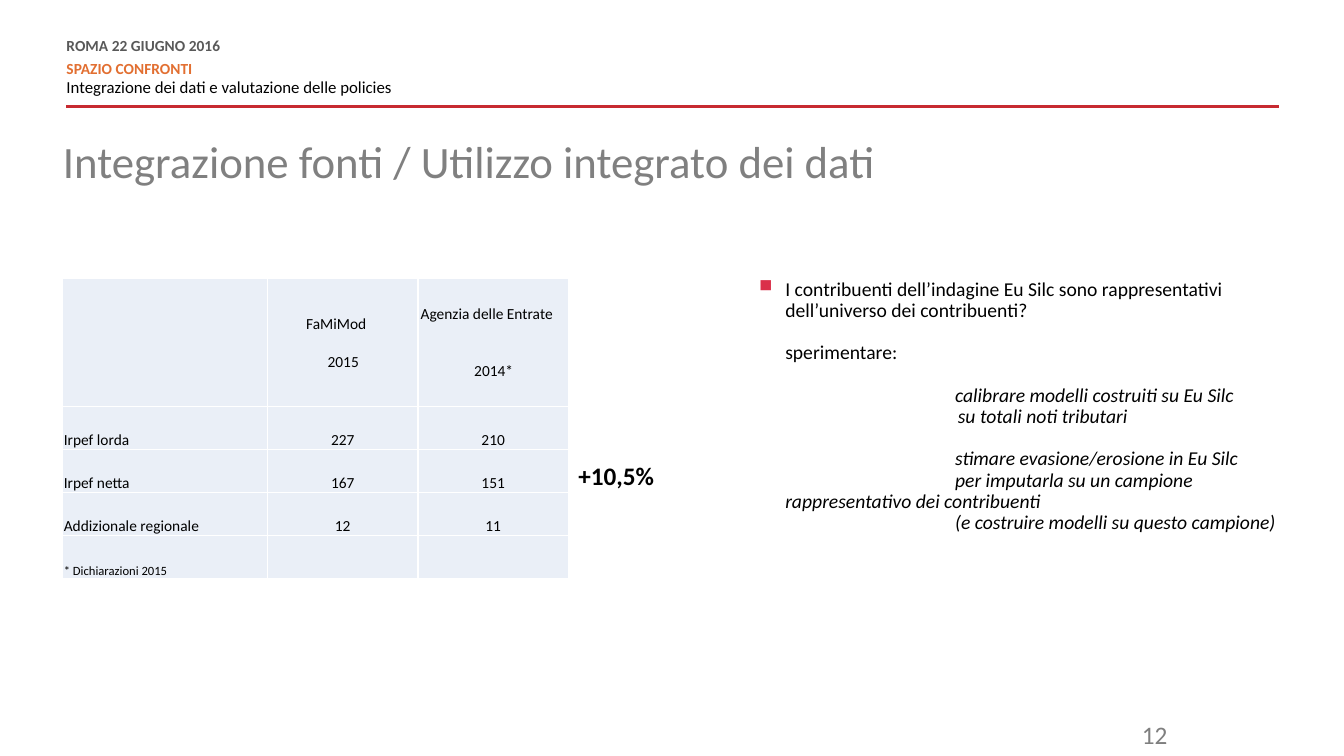
from dataclasses import dataclass

from lxml import etree
from pptx import Presentation
from pptx import util as u
from pptx.dml.color import RGBColor
from pptx.enum import shapes, text
from pptx.oxml.ns import qn

# Content
TITLE = "Integrazione fonti / Utilizzo integrato dei dati"
PAGE_NUMBER = "12"
DIFFERENCE = "+10,5%"
EVENT_DATE = "ROMA 22 GIUGNO 2016"
EVENT_NAME = "SPAZIO CONFRONTI"
EVENT_TOPIC = "Integrazione dei dati e valutazione delle policies"
SOURCES = [("FaMiMod", "2015", 13.4), ("Agenzia delle Entrate", "2014*", 26.8)]
TAXES = [
    ("Irpef lorda", "227", "210"),
    ("Irpef netta", "167", "151"),
    ("Addizionale regionale", "12", "11"),
    ("* Dichiarazioni 2015", "", ""),
]
QUESTION = ("I contribuenti dell’indagine Eu Silc sono rappresentativi "
            "dell’universo dei contribuenti?")
# Text, indent, space before, italic
STEPS = [
    ("sperimentare:", 22.3, 15.2, False),
    ("calibrare modelli costruiti su Eu Silc", 143.6, 15.2, True),
    ("su totali noti tributari", 145.6, 0, True),
    ("stimare evasione/erosione in Eu Silc", 143.6, 15.2, True),
    ("per imputarla su un campione", 143.6, 0, True),
    ("rappresentativo dei contribuenti", 22.3, 0, True),
    ("(e costruire modelli su questo campione)", 143.6, 0, True),
]


@dataclass(frozen=True)
class Theme:
    font: str = "Calibri"
    black: str = "000000"
    dark: str = "595959"
    gray: str = "808080"
    page_gray: str = "7F7F7F"
    orange: str = "E26F31"
    red: str = "C72A31"
    bullet: str = "DA304A"
    cell: str = "EAEFF7"
    white: str = "FFFFFF"
    title: float = 32
    large: float = 18
    body: float = 14
    topic: float = 12
    small: float = 11
    note: float = 9


THEME = Theme()


def write(frame, words, *, size, color=THEME.black, bold=False, italic=False,
          align=text.PP_ALIGN.LEFT, before=0, after=0, spacing=None,
          indent=0, bullet=None):
    """Fill the empty first paragraph, or add a new one."""
    para = frame.paragraphs[0]
    if para.runs:
        para = frame.add_paragraph()
    props = para._p.get_or_add_pPr()
    props.set("marL", str(u.Pt(indent)))
    props.set("indent", str(-u.Pt(indent) if bullet else 0))
    para.alignment = align
    para.space_before, para.space_after = u.Pt(before), u.Pt(after)
    if spacing:
        para.line_spacing = spacing
    if bullet:
        tint = etree.SubElement(props, qn("a:buClr"))
        etree.SubElement(tint, qn("a:srgbClr"), val=THEME.bullet)
        etree.SubElement(props, qn("a:buSzPct"), val="160000")
        etree.SubElement(props, qn("a:buChar"), char=bullet)
    span = para.add_run()
    span.text = words
    font = span.font
    font.name, font.size = THEME.font, u.Pt(size)
    font.bold, font.italic = bold, italic
    font.color.rgb = RGBColor.from_string(color)


def set_insets(frame, side=0, top=0):
    frame.margin_left = frame.margin_right = u.Pt(side)
    frame.margin_top = frame.margin_bottom = u.Pt(top)


def add_box(page, left, top, width, height, side=0, inset_top=0):
    box = page.shapes.add_textbox(*map(u.Pt, (left, top, width, height)))
    frame = box.text_frame
    frame.word_wrap = True
    set_insets(frame, side, inset_top)
    return frame


def format_cell(cell):
    set_insets(cell, 0.7, 0.7)
    cell.margin_bottom = 0
    props = cell._tc.get_or_add_tcPr()
    for edge in ("lnL", "lnR", "lnT", "lnB"):
        line = etree.SubElement(props, qn("a:" + edge), w=str(u.Pt(1)))
        fill = etree.SubElement(line, qn("a:solidFill"))
        etree.SubElement(fill, qn("a:srgbClr"), val=THEME.white)
    cell.fill.solid()
    cell.fill.fore_color.rgb = RGBColor.from_string(THEME.cell)


def add_header(page):
    frame = add_box(page, 47.5, 28.1, 600.5, 42.5)
    pitch = u.Pt(10.8)
    write(frame, EVENT_DATE, size=THEME.small, color=THEME.dark, bold=True,
          spacing=pitch, after=6)
    write(frame, EVENT_NAME, size=THEME.small, color=THEME.orange, bold=True,
          spacing=pitch)
    write(frame, EVENT_TOPIC, size=THEME.topic, spacing=pitch, before=3, after=6)
    rule = page.shapes.add_connector(
        shapes.MSO_CONNECTOR.STRAIGHT, *map(u.Pt, (47.5, 76.3, 913.7, 76.3)))
    rule.line.color.rgb = RGBColor.from_string(THEME.red)
    rule.line.width = u.Pt(2)
    etree.SubElement(rule._element.spPr, qn("a:effectLst"))


def add_title(page):
    title = page.shapes.title
    title.left, title.top, title.width, title.height = map(
        u.Pt, (44.9, 100.1, 842.4, 58.3))
    frame = title.text_frame
    set_insets(frame)
    frame.vertical_anchor = text.MSO_ANCHOR.TOP
    write(frame, TITLE, size=THEME.title, color=THEME.gray, spacing=0.9)


def add_tax_table(page):
    widths = [146.2, 107.5, 107.5]
    heights = [91.7] + [30.7] * len(TAXES)
    table_shape = page.shapes.add_table(
        len(heights), len(widths), u.Pt(44.9), u.Pt(198.7),
        u.Pt(sum(widths)), u.Pt(sum(heights)))
    table = table_shape.table
    for column, width in zip(table.columns, widths):
        column.width = u.Pt(width)
    for row, height in zip(table.rows, heights):
        row.height = u.Pt(height)
    for cell in table.iter_cells():
        format_cell(cell)

    # Source names sit slightly left of their years
    center = text.PP_ALIGN.CENTER
    shift = 10
    for index, (name, year, gap) in enumerate(SOURCES, 1):
        cell = table.cell(0, index)
        cell.vertical_anchor = text.MSO_ANCHOR.MIDDLE
        cell.margin_right = u.Pt(shift)
        write(cell.text_frame, name, size=THEME.small, align=center)
        write(cell.text_frame, year, size=THEME.small, align=center,
              before=gap, indent=shift)
    for row, values in enumerate(TAXES, 1):
        for column, value in enumerate(values):
            if not value:
                continue
            cell = table.cell(row, column)
            cell.vertical_anchor = text.MSO_ANCHOR.BOTTOM
            write(cell.text_frame, value,
                  size=THEME.note if value.startswith("*") else THEME.small,
                  align=center if column else text.PP_ALIGN.LEFT)


def add_discussion(page):
    frame = add_box(page, 538.6, 199.4, 375.1, 203)
    write(frame, QUESTION, size=THEME.body, spacing=0.9, indent=22.3, bullet="▪")
    for words, indent, before, italic in STEPS:
        write(frame, words, size=THEME.body, spacing=0.9, indent=indent,
              before=before, italic=italic)


def main():
    deck = Presentation()
    deck.slide_width, deck.slide_height = u.Pt(960), u.Pt(540)
    page = deck.slides.add_slide(deck.slide_layouts[5])
    add_header(page)
    add_title(page)
    add_tax_table(page)
    add_discussion(page)
    # Difference beside the table and page number
    write(add_box(page, 406.1, 325.4, 72.7, 28.8, 7.2, 3.6), DIFFERENCE,
          size=THEME.large, bold=True)
    write(add_box(page, 756, 510.5, 85, 25.2, 7.2, 3.6), PAGE_NUMBER,
          size=THEME.large, color=THEME.page_gray, align=text.PP_ALIGN.RIGHT)
    deck.save("out.pptx")


if __name__ == "__main__":
    main()
